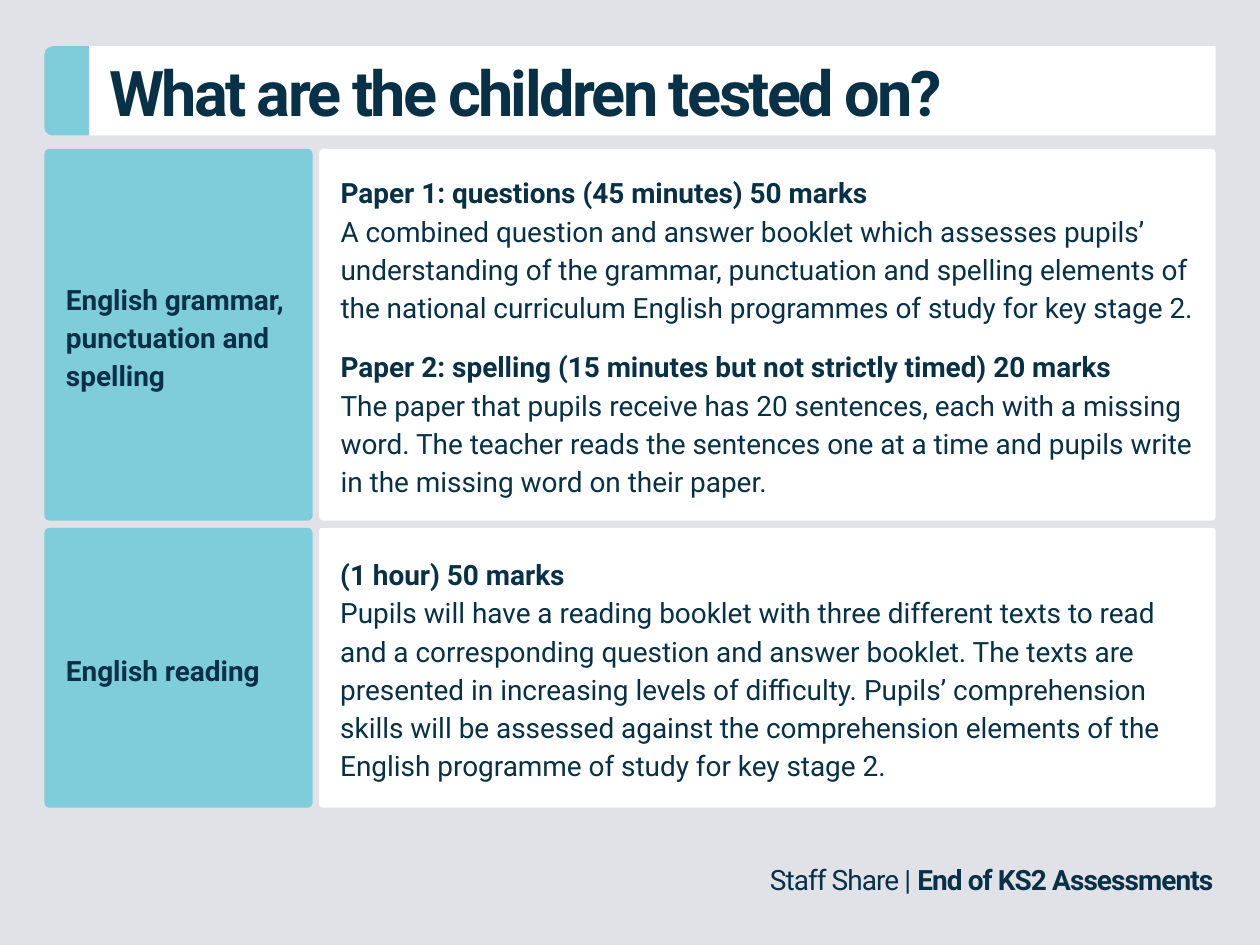
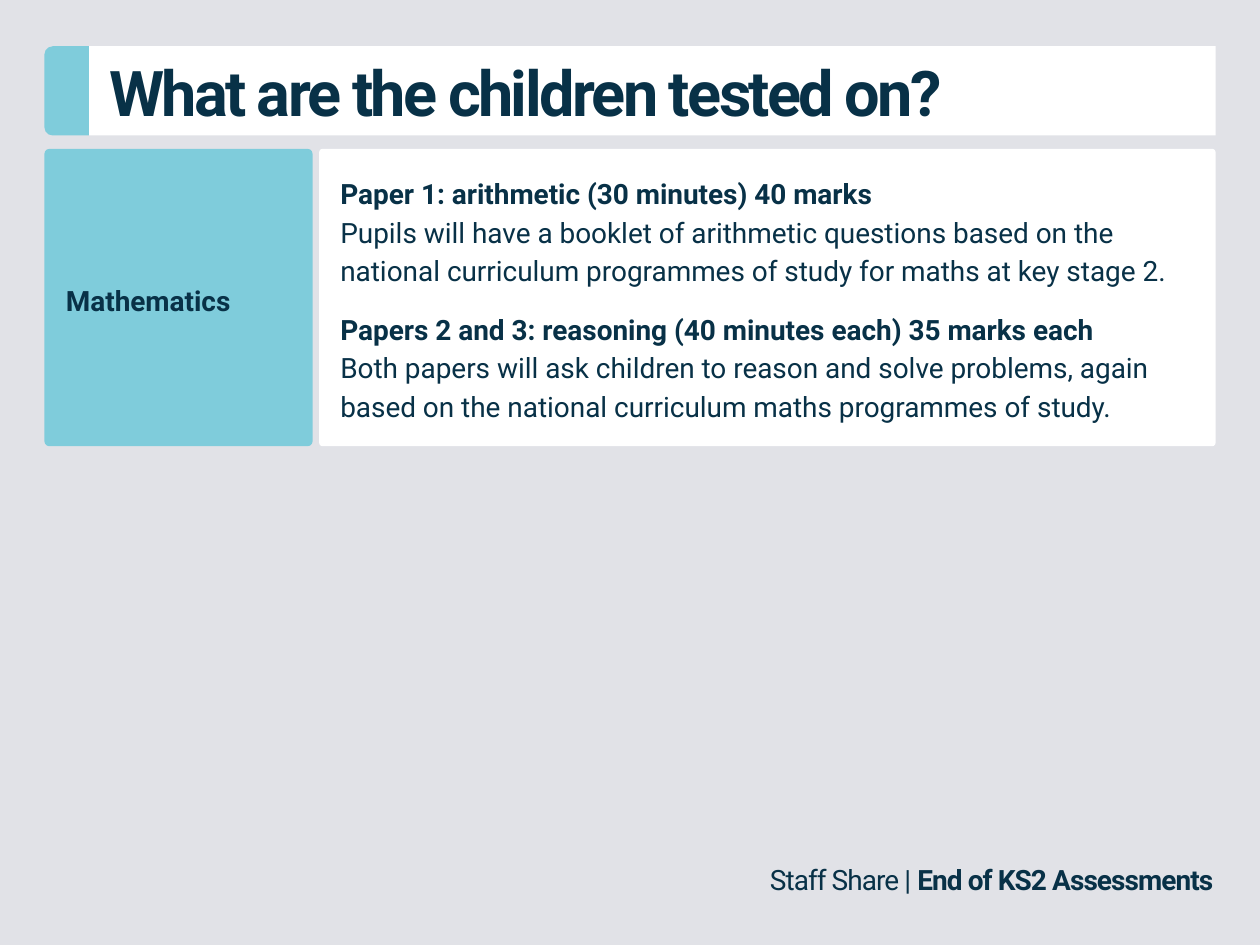
from dataclasses import dataclass

from pptx import Presentation
from pptx.dml.color import RGBColor
from pptx.enum.shapes import MSO_SHAPE
from pptx.enum.text import MSO_ANCHOR, MSO_AUTO_SIZE, PP_ALIGN
from pptx.util import Pt

ROUNDED = MSO_SHAPE.ROUNDED_RECTANGLE
TAB_SHAPE = MSO_SHAPE.ROUND_2_SAME_RECTANGLE
MIDDLE = MSO_ANCHOR.MIDDLE
LEFT, RIGHT = PP_ALIGN.LEFT, PP_ALIGN.RIGHT
NO_AUTOFIT = MSO_AUTO_SIZE.NONE

COLOURS = {"page": "E1E2E7", "ink": "083147", "panel": "FFFFFF", "accent": "7FCCDB"}
FONT = "Roboto"
TITLE = "What are the children tested on?"
TITLE_ONLY = 5

# Shared grid, in points
MARGIN_LEFT, MARGIN_RIGHT = 25.4, 694.6
BAND_TOP, BAND_HEIGHT, TAB_WIDTH = 26.4, 51, 25.4
ROWS_TOP, ROW_GAP = 85.1, 4.1
TOPIC_WIDTH, COLUMN_GAP = 153.2, 3.8
INSET = 11.5


@dataclass(frozen=True)
class Paper:
    heading: str
    description: str


@dataclass(frozen=True)
class Subject:
    name: str
    height: float
    papers: tuple[Paper, ...]


SLIDES = (
    (
        Subject("English grammar, punctuation and spelling", 212.4, (
            Paper("Paper 1: questions (45 minutes) 50 marks",
                  "A combined question and answer booklet which assesses pupils’ "
                  "understanding of the grammar, punctuation and spelling elements of "
                  "the national curriculum English programmes of study for key stage 2."),
            Paper("Paper 2: spelling (15 minutes but not strictly timed) 20 marks",
                  "The paper that pupils receive has 20 sentences, each with a missing "
                  "word. The teacher reads the sentences one at a time and pupils write "
                  "in the missing word on their paper."),
        )),
        Subject("English reading", 159.9, (
            Paper("(1 hour) 50 marks",
                  "Pupils will have a reading booklet with three different texts to read "
                  "and a corresponding question and answer booklet. The texts are "
                  "presented in increasing levels of difficulty. Pupils’ comprehension "
                  "skills will be assessed against the comprehension elements of the "
                  "English programme of study for key stage 2."),
        )),
    ),
    (
        Subject("Mathematics", 169.9, (
            Paper("Paper 1: arithmetic (30 minutes) 40 marks",
                  "Pupils will have a booklet of arithmetic questions based on the "
                  "national curriculum programmes of study for maths at key stage 2."),
            Paper("Papers 2 and 3: reasoning (40 minutes each) 35 marks each",
                  "Both papers will ask children to reason and solve problems, again "
                  "based on the national curriculum maths programmes of study."),
        )),
    ),
)


def colour(name: str) -> RGBColor:
    return RGBColor.from_string(COLOURS[name])


def style(paragraph, size: float = 16, bold: bool | None = None, align=LEFT) -> None:
    paragraph.alignment = align
    font = paragraph.font
    font.name, font.size, font.bold = FONT, Pt(size), bold
    font.color.rgb = colour("ink")


def track(span, spacing: float) -> None:
    """Set letter spacing in points."""
    span._r.get_or_add_rPr().set("spc", str(round(spacing * 100)))


def set_frame(frame, left: float, top: float, right: float, bottom: float) -> None:
    frame.word_wrap = True
    frame.auto_size = NO_AUTOFIT
    frame.vertical_anchor = MIDDLE
    frame.margin_left, frame.margin_top = Pt(left), Pt(top)
    frame.margin_right, frame.margin_bottom = Pt(right), Pt(bottom)


def add_block(page, kind, left: float, top: float, width: float, height: float,
              fill: str, corner: float):
    block = page.shapes.add_shape(kind, Pt(left), Pt(top), Pt(width), Pt(height))
    block.shadow.inherit = False
    block.fill.solid()
    block.fill.fore_color.rgb = colour(fill)
    block.line.fill.background()
    block.adjustments[0] = corner
    return block


def add_panel(page, left: float, top: float, width: float, height: float, fill: str,
              corner: float, right_inset: float, lines: list[tuple[str, bool, float]]) -> None:
    """Draw a rounded panel; each line is its text, boldness and space before."""
    panel = add_block(page, ROUNDED, left, top, width, height, fill, corner)
    frame = panel.text_frame
    set_frame(frame, INSET, 8.6, right_inset, 8.6)
    for index, (text, bold, space) in enumerate(lines):
        paragraph = frame.add_paragraph() if index else frame.paragraphs[0]
        paragraph.text = text
        paragraph.line_spacing = 1.14
        if space:
            paragraph.space_before = Pt(space)
        style(paragraph, bold=bold)


def add_title(page) -> None:
    # White title band
    title = page.shapes.title
    band_left = MARGIN_LEFT + TAB_WIDTH
    title.left, title.top = Pt(band_left), Pt(BAND_TOP)
    title.width, title.height = Pt(MARGIN_RIGHT - band_left), Pt(BAND_HEIGHT)
    title.fill.solid()
    title.fill.fore_color.rgb = colour("panel")
    frame = title.text_frame
    frame.text = TITLE
    set_frame(frame, INSET, 5.8, INSET, 0)
    paragraph = frame.paragraphs[0]
    paragraph.line_spacing = 0.9
    style(paragraph, size=36, bold=True)
    track(paragraph.runs[0], -1.5)

    # Accent tab: turned a quarter, so its sides swap about its centre
    shift = (BAND_HEIGHT - TAB_WIDTH) / 2
    tab = add_block(page, TAB_SHAPE, MARGIN_LEFT - shift, BAND_TOP + shift,
                    BAND_HEIGHT, TAB_WIDTH, "accent", 0.187)
    tab.rotation = 270


def add_footer(page) -> None:
    box = page.shapes.add_textbox(Pt(141), Pt(489.6), Pt(559.5), Pt(26.6))
    box.text_frame.word_wrap = True
    paragraph = box.text_frame.paragraphs[0]
    style(paragraph, align=RIGHT)
    for text, bold in (("Staff Share | ", False), ("End of KS2 Assessments", True)):
        span = paragraph.add_run()
        span.text = text
        span.font.bold = bold
        track(span, -0.5)


def add_subjects(page, subjects: tuple[Subject, ...]) -> None:
    top = ROWS_TOP
    detail_left = MARGIN_LEFT + TOPIC_WIDTH + COLUMN_GAP
    for subject in subjects:
        add_panel(page, MARGIN_LEFT, top, TOPIC_WIDTH, subject.height, "accent", 0.018,
                  INSET, [(subject.name, True, 0)])
        lines = []
        for index, paper in enumerate(subject.papers):
            lines.append((paper.heading, True, 12 if index else 0))
            lines.append((paper.description, False, 0))
        add_panel(page, detail_left, top, MARGIN_RIGHT - detail_left, subject.height,
                  "panel", 0.011, 8.6, lines)
        top += subject.height + ROW_GAP


def main() -> None:
    deck = Presentation()
    deck.slide_width, deck.slide_height = Pt(720), Pt(540)
    background = deck.slide_master.background.fill
    background.solid()
    background.fore_color.rgb = colour("page")
    for subjects in SLIDES:
        page = deck.slides.add_slide(deck.slide_layouts[TITLE_ONLY])
        add_footer(page)
        add_title(page)
        add_subjects(page, subjects)
    deck.save("out.pptx")


if __name__ == "__main__":
    main()
